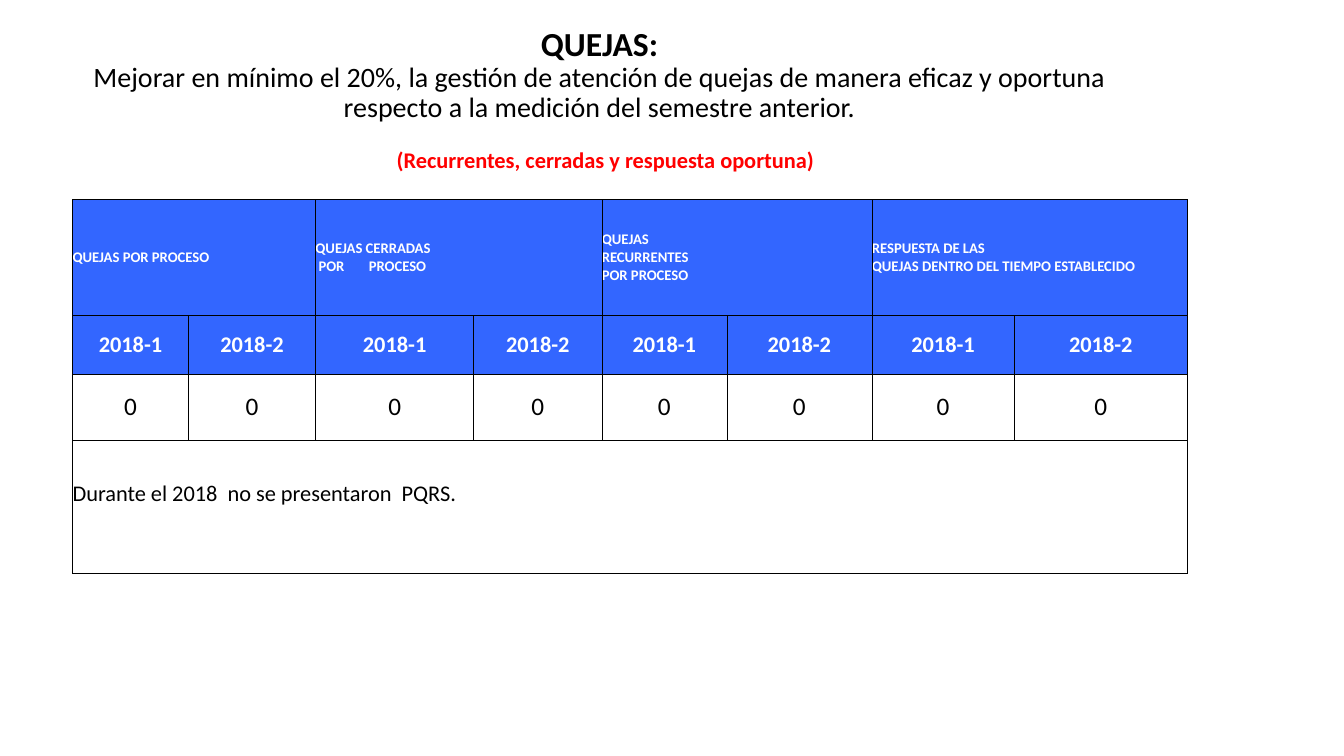
from dataclasses import dataclass

from lxml import etree
from pptx import Presentation
from pptx.dml.color import RGBColor
from pptx.enum.text import MSO_ANCHOR, MSO_AUTO_SIZE, PP_ALIGN
from pptx.oxml.ns import qn
from pptx.util import Inches, Pt

CENTER, JUSTIFY = PP_ALIGN.CENTER, PP_ALIGN.JUSTIFY
TOP, MIDDLE = MSO_ANCHOR.TOP, MSO_ANCHOR.MIDDLE
WIDE, HIGH = Inches(13.33), Inches(7.5)


@dataclass(frozen=True)
class Theme:
    font: str = "Calibri"
    ink: str = "000000"
    paper: str = "FFFFFF"
    blue: str = "3366FF"
    red: str = "FF0000"
    title: float = 24
    goal: float = 20
    note: float = 16
    head: float = 10.5
    term: float = 16
    value: float = 18
    rule: float = 0.5


@dataclass(frozen=True)
class Style:
    size: float
    color: str
    bold: bool = False
    align: PP_ALIGN = CENTER
    fill: str = ""


THEME = Theme()
HEAD = Style(THEME.head, THEME.paper, True, JUSTIFY, THEME.blue)
TERM = Style(THEME.term, THEME.paper, True, CENTER, THEME.blue)
VALUE = Style(THEME.value, THEME.ink)
REMARK = Style(THEME.note, THEME.ink, align=JUSTIFY)

# Column and row sizes, in percent of the slide
COLS = (8.63, 9.45, 11.78, 9.53, 9.3, 10.8, 10.58, 12.9)
ROWS = (15.33, 7.73, 8.8, 17.6)

TITLE = (
    ("QUEJAS:", Style(THEME.title, THEME.ink, True)),
    ("Mejorar en mínimo el 20%, la gestión de atención de quejas de manera "
     "eficaz y oportuna respecto a la medición del semestre anterior.",
     Style(THEME.goal, THEME.ink)),
    ("(Recurrentes, cerradas y respuesta oportuna)",
     Style(THEME.note, THEME.red, True)),
)
GROUPS = (
    "QUEJAS POR PROCESO",
    "QUEJAS CERRADAS\nPOR\tPROCESO",
    "QUEJAS\nRECURRENTES\nPOR PROCESO",
    "RESPUESTA DE LAS\nQUEJAS DENTRO DEL TIEMPO ESTABLECIDO",
)
TERMS = ("2018-1", "2018-2")


def across(share: float) -> int:
    return round(WIDE * share / 100)


def down(share: float) -> int:
    return round(HIGH * share / 100)


def dress(para, style: Style) -> None:
    para.alignment = style.align
    for run in para.runs:
        font = run.font
        font.name, font.size, font.bold = THEME.font, Pt(style.size), style.bold
        font.color.rgb = RGBColor.from_string(style.color)


def indent(para, left: int) -> None:
    props = para._p.get_or_add_pPr()
    props.set("marL", str(left))
    props.set("indent", "0")


def add_tab(para, place: int) -> None:
    tabs = etree.SubElement(para._p.get_or_add_pPr(), qn("a:tabLst"))
    etree.SubElement(tabs, qn("a:tab"), pos=str(place), algn="l")


def frame(cell) -> None:
    props = cell._tc.get_or_add_tcPr()
    for side in ("lnL", "lnR", "lnT", "lnB"):
        line = etree.SubElement(props, qn(f"a:{side}"), w=str(Pt(THEME.rule)))
        fill = etree.SubElement(line, qn("a:solidFill"))
        etree.SubElement(fill, qn("a:srgbClr"), val=THEME.ink)


def write(cell, text: str, style: Style) -> None:
    cell.text_frame.text = text
    for para in cell.text_frame.paragraphs:
        if "\t" in para.text:
            indent(para, Inches(0.03))
            add_tab(para, Inches(0.45))
        dress(para, style)
    if style.fill:
        cell.fill.solid()
        cell.fill.fore_color.rgb = RGBColor.from_string(style.fill)


def add_title(slide) -> None:
    title = slide.shapes.title
    title.left, title.top = across(3.83), down(2.93)
    title.width, title.height = across(81.55), down(21)
    body = title.text_frame
    body.word_wrap, body.auto_size = True, MSO_AUTO_SIZE.NONE
    body.vertical_anchor = TOP
    body.text = "\n".join(text for text, _ in TITLE)
    for para, (_, style) in zip(body.paragraphs, TITLE):
        para.line_spacing = 0.9
        dress(para, style)
    note = body.paragraphs[-1]
    note.space_before = Pt(18)
    indent(note, Inches(0.12))
    note.runs[0].font.bold = True


def add_grid(slide) -> None:
    table = slide.shapes.add_table(
        len(ROWS), len(COLS), across(5.4), down(26.4),
        across(sum(COLS)), down(sum(ROWS))).table
    table.first_row = table.horz_banding = False
    for col, share in zip(table.columns, COLS):
        col.width = across(share)
    for row, share in zip(table.rows, ROWS):
        row.height = down(share)
    for cell in table.iter_cells():
        frame(cell)
        cell.fill.background()
        cell.vertical_anchor = MIDDLE
        cell.margin_left = cell.margin_right = 0
        cell.margin_top = cell.margin_bottom = 0

    # Group headings, each over two terms
    for place, text in enumerate(GROUPS):
        first = table.cell(0, 2 * place)
        first.merge(table.cell(0, 2 * place + 1))
        write(first, text, HEAD)

    # Terms and their counts
    for place in range(len(COLS)):
        write(table.cell(1, place), TERMS[place % 2], TERM)
        write(table.cell(2, place), "0", VALUE)

    # Closing remark, set a little above the middle
    remark = table.cell(3, 0)
    remark.merge(table.cell(3, len(COLS) - 1))
    write(remark, "Durante el 2018  no se presentaron  PQRS.", REMARK)
    remark.margin_bottom = down(3.5)


def main() -> None:
    deck = Presentation()
    deck.slide_width, deck.slide_height = WIDE, HIGH
    slide = deck.slides.add_slide(deck.slide_layouts.get_by_name("Title Only"))
    add_title(slide)
    add_grid(slide)
    deck.save("out.pptx")


if __name__ == "__main__":
    main()
